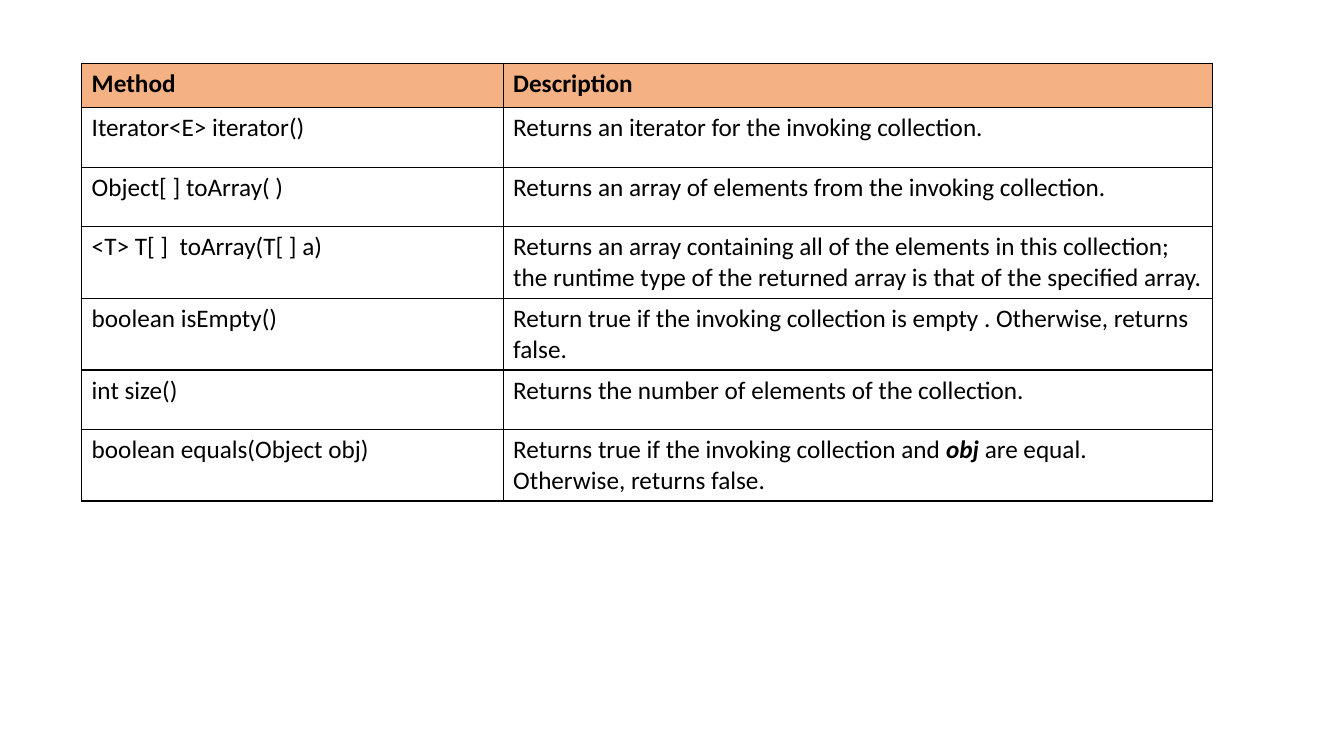
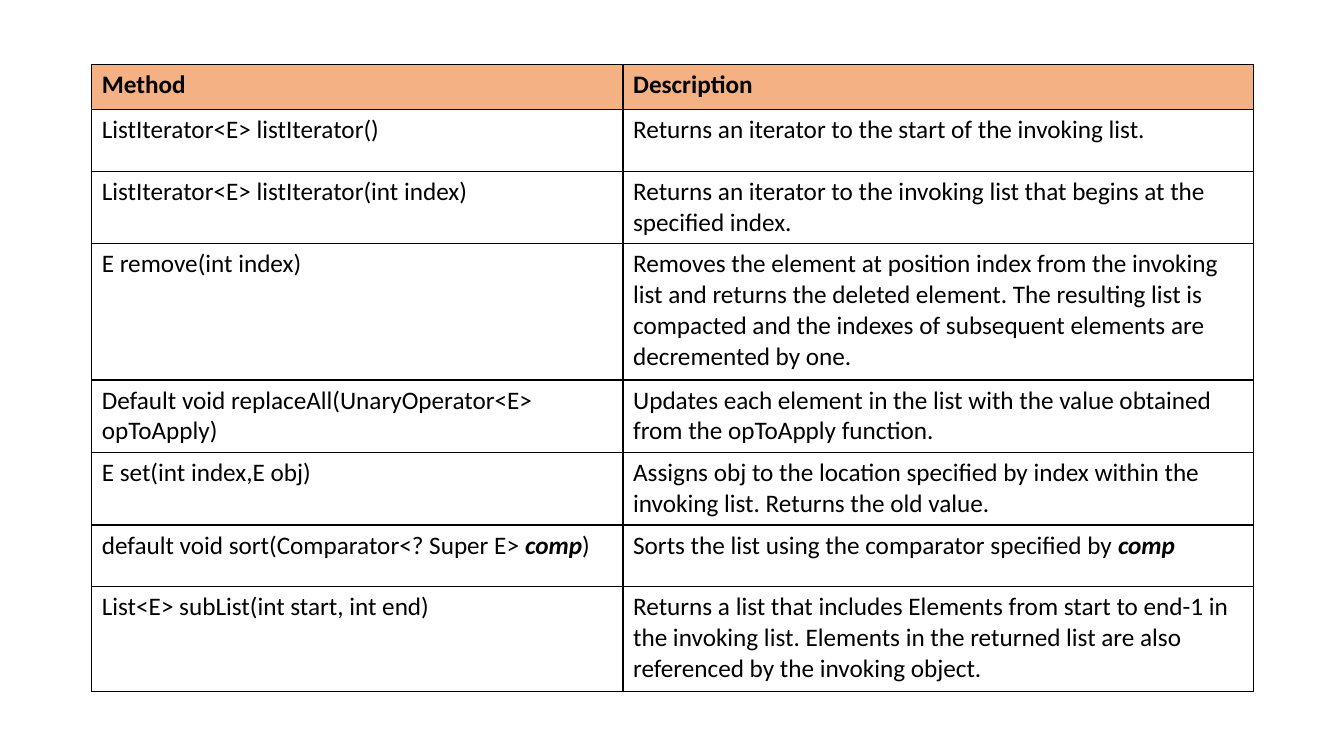
from lxml import etree
from pptx import Presentation
from pptx.dml.color import RGBColor
from pptx.oxml.ns import qn
from pptx.util import Inches, Pt

BLACK = RGBColor(0x00, 0x00, 0x00)
HEADER_FILL = RGBColor(0xF4, 0xB1, 0x83)
BORDER_WIDTH = Pt(1)
BORDER_SIDES = ("a:lnL", "a:lnR", "a:lnT", "a:lnB")
TEXT_FORMAT = {"name": "Calibri", "size": Pt(18)}
BLANK_LAYOUT = 6
EMPHASIS = "*"  # text between two marks is bold italic
HEADER = ("Method", "Description")

# Each row: height, method, description
COLLECTION_ROWS = [
    (0.59, "Iterator<E> iterator()", "Returns an iterator for the invoking collection."),
    (0.59, "Object[ ] toArray( )",
     "Returns an array of elements from the invoking collection."),
    (0.71, "<T> T[ ]  toArray(T[ ] a)",
     "Returns an array containing all of the elements in this collection; "
     "the runtime type of the returned array is that of the specified array."),
    (0.71, "boolean isEmpty()",
     "Return true if the invoking collection is empty . Otherwise, returns false."),
    (0.59, "int size()", "Returns the number of elements of the collection."),
    (0.71, "boolean equals(Object obj)",
     "Returns true if the invoking collection and *obj* are equal. "
     "Otherwise, returns false."),
]
LIST_ROWS = [
    (0.61, "ListIterator<E> listIterator()",
     "Returns an iterator to the start of the invoking list."),
    (0.72, "ListIterator<E> listIterator(int index)",
     "Returns an iterator to the invoking list that begins at the specified index."),
    (1.35, "E remove(int index)",
     "Removes the element at position index from the invoking list and returns "
     "the deleted element. The resulting list is compacted and the indexes of "
     "subsequent elements are decremented by one."),
    (0.72, "Default void replaceAll(UnaryOperator<E> opToApply)",
     "Updates each element in the list with the value obtained from the "
     "opToApply function."),
    (0.72, "E set(int index,E obj)",
     "Assigns obj to the location specified by index within the invoking list. "
     "Returns the old value."),
    (0.61, "default void sort(Comparator<? Super E> *comp*)",
     "Sorts the list using the comparator specified by *comp*"),
    (1.04, "List<E> subList(int start, int end)",
     "Returns a list that includes Elements from start to end-1 in the invoking "
     "list. Elements in the returned list are also referenced by the invoking object."),
]


def add_borders(cell):
    """Draw a solid line on all four sides of a cell."""
    properties = cell._tc.get_or_add_tcPr()
    for side in BORDER_SIDES:
        line = etree.SubElement(properties, qn(side), w=str(BORDER_WIDTH))
        fill = etree.SubElement(line, qn("a:solidFill"))
        etree.SubElement(fill, qn("a:srgbClr"), val=str(BLACK))


def write_text(cell, text, is_header):
    """Write text in runs, switching to bold italic between emphasis marks."""
    paragraph = cell.text_frame.paragraphs[0]
    for position, part in enumerate(text.split(EMPHASIS)):
        if not part:
            continue
        emphasized = position % 2 == 1
        run = paragraph.add_run()
        run.text = part
        run_format = {**TEXT_FORMAT, "bold": is_header or emphasized,
                      "italic": emphasized}
        for attribute, value in run_format.items():
            setattr(run.font, attribute, value)
        run.font.color.rgb = BLACK


def format_cell(cell, text, is_header):
    add_borders(cell)
    if is_header:
        cell.fill.solid()
        cell.fill.fore_color.rgb = HEADER_FILL
    else:
        cell.fill.background()
    write_text(cell, text, is_header)


def add_method_table(slide, left, top, column_widths, header_height, body_rows):
    rows = [(header_height, *HEADER), *body_rows]
    height = sum(row[0] for row in rows)
    table = slide.shapes.add_table(
        len(rows), len(column_widths), Inches(left), Inches(top),
        Inches(sum(column_widths)), Inches(height)).table
    table.horz_banding = False
    for column, width in zip(table.columns, column_widths):
        column.width = Inches(width)
    for row_index, (row_height, *texts) in enumerate(rows):
        table.rows[row_index].height = Inches(row_height)
        for column_index, text in enumerate(texts):
            format_cell(table.cell(row_index, column_index), text, row_index == 0)


def main():
    presentation = Presentation()
    presentation.slide_width = Inches(13.33)
    presentation.slide_height = Inches(7.5)
    layout = presentation.slide_layouts[BLANK_LAYOUT]

    # Collection methods
    slide = presentation.slides.add_slide(layout)
    add_method_table(slide, 0.81, 0.63, (4.18, 7.04), 0.44, COLLECTION_ROWS)

    # List methods
    slide = presentation.slides.add_slide(layout)
    add_method_table(slide, 0.91, 0.64, (5.27, 6.25), 0.45, LIST_ROWS)

    presentation.save("out.pptx")


if __name__ == "__main__":
    main()
